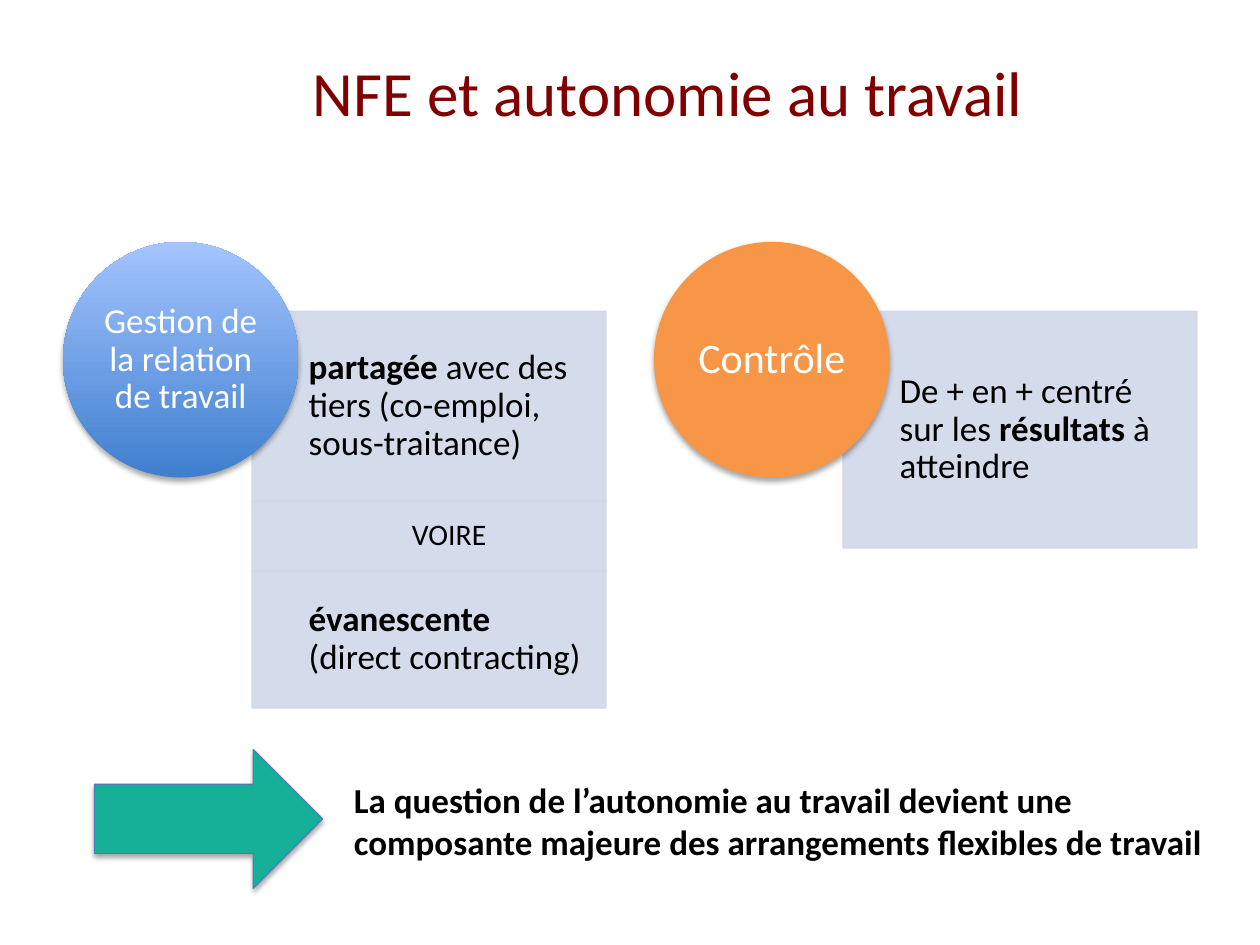
from dataclasses import dataclass

from lxml import etree
from pptx import Presentation
from pptx.dml.color import RGBColor
from pptx.enum.shapes import MSO_SHAPE
from pptx.enum.text import MSO_ANCHOR, PP_ALIGN
from pptx.oxml.ns import qn
from pptx.util import Inches, Pt

RECTANGLE, CIRCLE, ARROW = MSO_SHAPE.RECTANGLE, MSO_SHAPE.OVAL, MSO_SHAPE.RIGHT_ARROW
LEFT, CENTER = PP_ALIGN.LEFT, PP_ALIGN.CENTER
MIDDLE, TOP = MSO_ANCHOR.MIDDLE, MSO_ANCHOR.TOP

FONT = "Calibri"
BLACK, WHITE, DARK_RED = "000000", "FFFFFF", "800000"
PANEL, ORANGE, GREEN, ARROW_EDGE = "D0D8E8", "F79646", "15B097", "4B7EBC"
BLUE_GRADIENT = ("3F7FCE", "A4C4FF")

COLUMN_LEFT, COLUMN_PITCH = 0.5, 4.69
CIRCLE_TOP, DIAMETER = 1.92, 1.87
PANEL_OFFSET, PANEL_TOP, PANEL_WIDTH = 1.5, 2.47, 2.81
PANEL_INDENT = 0.45


@dataclass
class Panel:
    spans: list[tuple[str, bool]]  # wording, bold
    height: float
    size: int = 20
    align: PP_ALIGN = LEFT
    inset: float = 0.16


@dataclass
class Topic:
    name: str
    size: int
    colors: tuple[str, ...]
    panels: list[Panel]


TOPICS = [
    Topic("Gestion de la relation de travail", 20, BLUE_GRADIENT, [
        Panel([("partagée", True), (" avec des tiers (co-emploi, sous-traitance)", False)], 1.51),
        Panel([("VOIRE", False)], 0.55, size=17, align=CENTER, inset=0.13),
        Panel([("évanescente", True), (" (direct contracting)", False)], 1.09),
    ]),
    Topic("Contrôle", 24, (ORANGE,), [
        Panel([("De + en + centré sur les ", False), ("résultats", True),
               (" à atteindre", False)], 1.88),
    ]),
]


def rgb(color: str) -> RGBColor:
    return RGBColor.from_string(color)


def write(box, spans, *, size, color=BLACK, align=LEFT, anchor=MIDDLE,
          insets=(0.1, 0.05, 0.1, 0.05), line_spacing=1.0) -> None:
    """Write one paragraph; insets run left, top, right, bottom in inches."""
    frame = box.text_frame
    frame.word_wrap = True
    frame.vertical_anchor = anchor
    (frame.margin_left, frame.margin_top,
     frame.margin_right, frame.margin_bottom) = map(Inches, insets)
    para = frame.paragraphs[0]
    para.alignment = align
    para.line_spacing = line_spacing
    for text, bold in spans:
        span = para.add_run()
        span.text = text
        span.font.name = FONT
        span.font.size = Pt(size)
        span.font.bold = bold
        span.font.color.rgb = rgb(color)


def add_box(page, left: float, top: float, width: float, height: float):
    return page.shapes.add_textbox(*map(Inches, (left, top, width, height)))


def add_shape(page, kind, left: float, top: float, width: float, height: float,
              colors: tuple[str, ...], edge: str | None = None):
    """Add a shape; two colours make a gradient from bottom to top."""
    shape = page.shapes.add_shape(kind, *map(Inches, (left, top, width, height)))
    shape.shadow.inherit = False
    if len(colors) == 2:
        shape.fill.gradient()
        shape.fill.gradient_angle = 90
        for stop, color, position in zip(shape.fill.gradient_stops, colors, (0, 1)):
            stop.color.rgb = rgb(color)
            stop.position = position
    else:
        shape.fill.solid()
        shape.fill.fore_color.rgb = rgb(colors[0])
    if edge:
        shape.line.color.rgb = rgb(edge)
        shape.line.width = Pt(0.75)
    else:
        shape.line.fill.background()
    return shape


def set_opacity(shape, percent: int) -> None:
    for color in shape.element.spPr.iter(qn("a:srgbClr")):
        etree.SubElement(color, qn("a:alpha"), val=str(percent * 1000))


def add_shadow(shape) -> None:
    effects = shape.element.spPr.find(qn("a:effectLst"))
    shadow = etree.SubElement(effects, qn("a:outerShdw"), blurRad=str(Pt(3.1)),
                              dist=str(Pt(1.8)), dir="5400000", rotWithShape="0")
    color = etree.SubElement(shadow, qn("a:srgbClr"), val=BLACK)
    etree.SubElement(color, qn("a:alpha"), val="35000")


def add_topic(page, topic: Topic, left: float) -> None:
    top = PANEL_TOP
    for panel in topic.panels:
        box = add_shape(page, RECTANGLE, left + PANEL_OFFSET, top, PANEL_WIDTH,
                        panel.height, (PANEL,), edge=PANEL)
        set_opacity(box, 90)
        write(box, panel.spans, size=panel.size, align=panel.align, line_spacing=0.9,
              insets=(PANEL_INDENT, panel.inset, panel.inset, panel.inset))
        top += panel.height
    circle = add_shape(page, CIRCLE, left, CIRCLE_TOP, DIAMETER, DIAMETER, topic.colors)
    add_shadow(circle)
    write(circle, [(topic.name, False)], size=topic.size, color=WHITE, align=CENTER,
          insets=(0, 0, 0, 0), line_spacing=0.9)


def main() -> None:
    deck = Presentation()
    deck.slide_width, deck.slide_height = Inches(10), Inches(7.5)
    page = deck.slides.add_slide(deck.slide_layouts[6])

    title = add_box(page, 0.8, 0.29, 9, 0.87)
    write(title, [("NFE et autonomie au travail", False)], size=36, color=DARK_RED, align=CENTER)

    for column, topic in enumerate(TOPICS):
        add_topic(page, topic, COLUMN_LEFT + column * COLUMN_PITCH)

    arrow = add_shape(page, ARROW, 0.75, 5.95, 1.81, 1.1, (GREEN,), edge=ARROW_EDGE)
    add_shadow(arrow)
    conclusion = add_box(page, 2.71, 6.13, 7.01, 0.77)
    write(conclusion, [("La question de l’autonomie au travail devient une composante majeure "
                        "des arrangements flexibles de travail", True)], size=20, anchor=TOP)

    deck.save("out.pptx")


if __name__ == "__main__":
    main()
